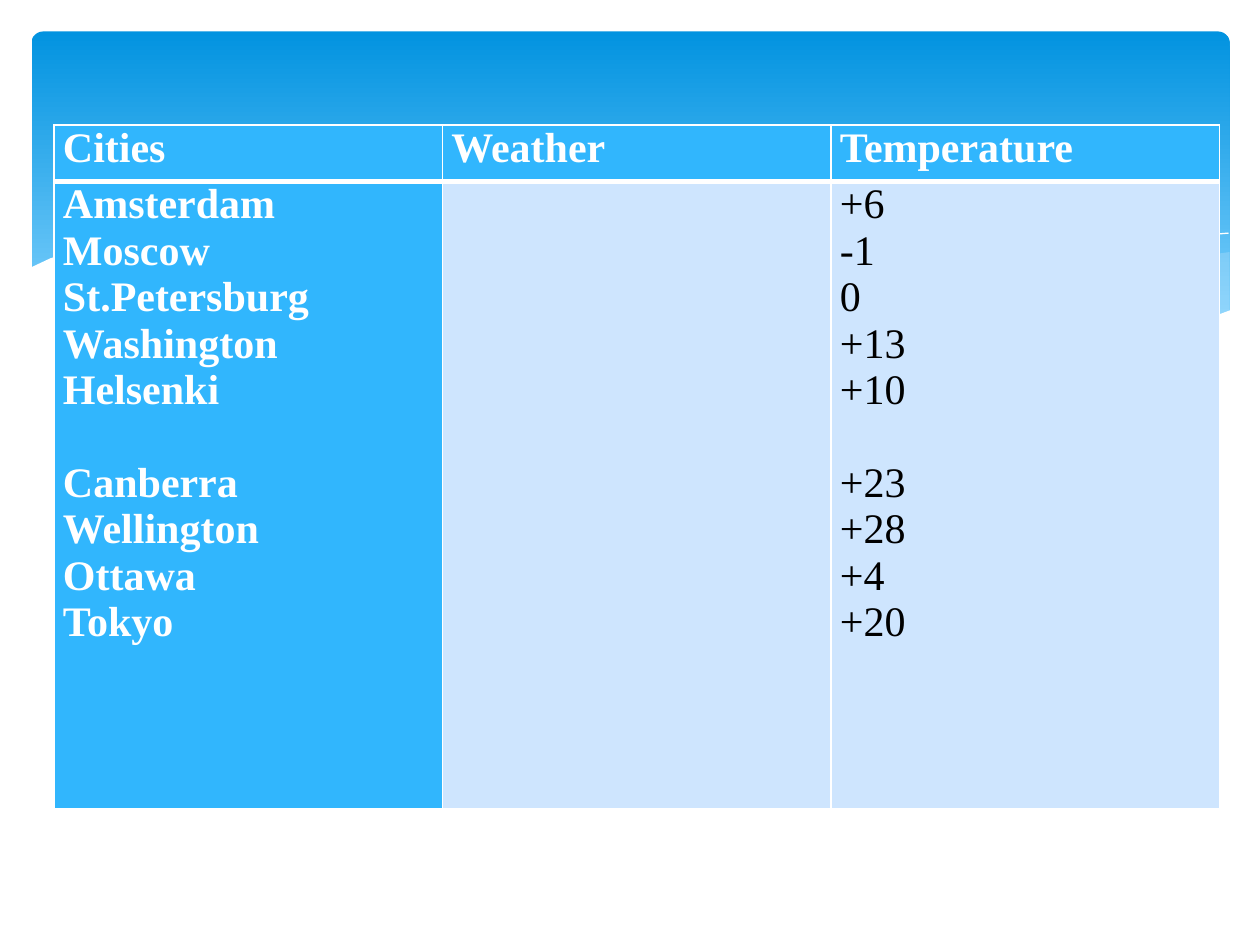
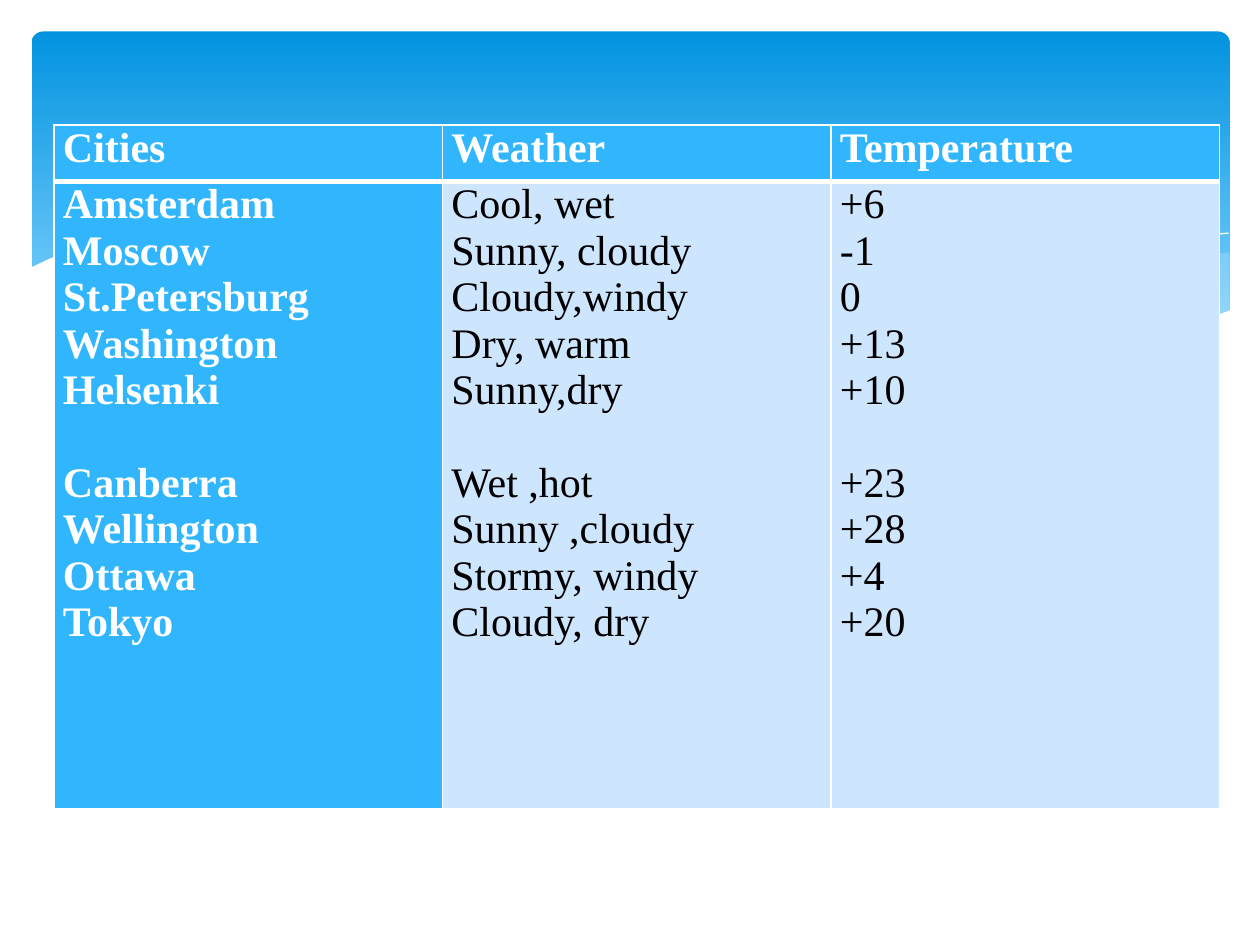
from lxml import etree
from pptx import Presentation
from pptx.dml.color import RGBColor
from pptx.enum.shapes import MSO_SHAPE
from pptx.oxml.ns import qn
from pptx.util import Emu, Inches, Pt

ROUNDED = MSO_SHAPE.ROUNDED_RECTANGLE

HEADINGS = ["Cities", "Weather", "Temperature"]
CITIES = ["Amsterdam", "Moscow", "St.Petersburg", "Washington", "Helsenki",
          "Canberra", "Wellington", "Ottawa", "Tokyo"]
TEMPERATURES = ["+6", "-1", "0", "+13", "+10", "+23", "+28", "+4", "+20"]
WEATHER = ["Cool, wet", "Sunny, cloudy", "Cloudy,windy", "Dry, warm", "Sunny,dry",
           "Wet ,hot", "Sunny ,cloudy", "Stormy, windy", "Cloudy, dry"]
WEATHER_PER_SLIDE = [[], WEATHER]
SECOND_GROUP = 5  # the cities from here on stand one line lower

WHITE, BLACK = "FFFFFF", "000000"
BLUE, PALE_BLUE, MIST = "31B6FD", "CEE5FE", "C6E7FC"
BAND_TOP, BAND_BOTTOM = "0293E0", "83D3FE"
FONT, SIZE, LINE_HEIGHT = "Times New Roman", 24, 26.57

# Waves across the foot of the band, in hundredths of an inch
RIGHT_WAVE = [(976, 200), (948, 204), (921, 210), (861, 223), (805, 237), (753, 248),
              (706, 257), (661, 265), (705, 271), (757, 276), (803, 278), (854, 276),
              (889, 272), (921, 265), (949, 257), (976, 247)]
MIDDLE_WAVE = [(893, 273), (837, 265), (775, 254), (706, 240), (629, 222), (584, 211),
               (528, 200), (465, 191), (399, 186), (344, 186), (286, 191), (342, 199),
               (404, 211), (449, 222), (530, 240), (601, 255), (665, 266), (722, 274),
               (773, 277), (828, 278), (867, 276)]
LONG_LINE = [(309, 195), (344, 190), (401, 187), (469, 189), (533, 194), (582, 200),
             (636, 208), (695, 219), (760, 233), (831, 251), (907, 272)]
SHORT_LINE = [(613, 257), (672, 241), (748, 223), (806, 210), (866, 199), (910, 192),
              (951, 187), (975, 185)]
WHITE_WAVE = [(977, 246), (950, 256), (920, 265), (887, 271), (850, 275), (809, 277),
              (761, 275), (708, 270), (648, 262), (579, 250), (503, 233), (447, 220),
              (391, 207), (340, 197), (292, 190), (250, 186), (211, 184), (161, 184),
              (119, 187), (85, 193), (59, 199), (40, 205), (23, 213), (23, 329), (977, 329)]
WAVES = [  # outline, fill, opacity in percent
    (RIGHT_WAVE, MIST, 29), (MIDDLE_WAVE, MIST, 40),
    (LONG_LINE, None, 100), (SHORT_LINE, None, 100), (WHITE_WAVE, WHITE, 100)]

TABLE_LEFT, TABLE_TOP, TABLE_WIDTH = 0.43, 0.99, 9.25
ROW_HEIGHTS = [0.45, 4.98]


def rgb(value):
    return RGBColor.from_string(value)


def draw_band(slide):
    band = slide.shapes.add_shape(ROUNDED, Inches(0.25), Inches(0.25),
                                  Inches(9.51), Inches(2.7))
    band.adjustments[0] = 0.034
    band.shadow.inherit = False
    band.line.fill.background()
    band.fill.gradient()
    band.fill.gradient_angle = 270
    for stop, colour, position in zip(band.fill.gradient_stops,
                                      (BAND_TOP, BAND_BOTTOM), (0, 0.9)):
        stop.color.rgb = rgb(colour)
        stop.position = position


def draw_wave(slide, outline, fill, opacity):
    """Draw a filled wave, or a white hairline when there is no fill."""
    builder = slide.shapes.build_freeform(*outline[0], scale=Inches(0.01))
    builder.add_line_segments(outline[1:], close=fill is not None)
    wave = builder.convert_to_shape()
    wave.shadow.inherit = False
    if fill is None:
        wave.fill.background()
        wave.line.color.rgb = rgb(WHITE)
        wave.line.width = Pt(0)
        return
    wave.line.fill.background()
    wave.fill.solid()
    wave.fill.fore_color.rgb = rgb(fill)
    if opacity < 100:
        colour = wave._element.spPr.find(qn("a:solidFill"))[0]
        etree.SubElement(colour, qn("a:alpha"), val=str(opacity * 1000))


def write(frame, lines, colour=BLACK, bold=False, gap_before=None):
    """Put one line in each paragraph, with an empty line's room before gap_before."""
    for number, line in enumerate(lines):
        paragraph = frame.add_paragraph() if number else frame.paragraphs[0]
        if number == gap_before:
            paragraph.space_before = Pt(LINE_HEIGHT)
        run = paragraph.add_run()
        run.text = line
        run.font.name, run.font.size, run.font.bold = FONT, Pt(SIZE), bold
        run.font.color.rgb = rgb(colour)


def set_borders(cell, **widths):
    """Give the cell white borders; widths are points by side: L, R, T, B."""
    properties = cell._tc.get_or_add_tcPr()
    for place, (side, width) in enumerate(widths.items()):
        line = etree.Element(qn("a:ln" + side), w=str(Pt(width)))
        fill = etree.SubElement(line, qn("a:solidFill"))
        etree.SubElement(fill, qn("a:srgbClr"), val=WHITE)
        properties.insert(place, line)


def draw_table(slide, weather):
    table = slide.shapes.add_table(
        len(ROW_HEIGHTS), len(HEADINGS), Inches(TABLE_LEFT), Inches(TABLE_TOP),
        Inches(TABLE_WIDTH), Inches(sum(ROW_HEIGHTS))).table
    for row, height in zip(table.rows, ROW_HEIGHTS):
        row.height = Inches(height)
    for column in table.columns:
        column.width = Emu(Inches(TABLE_WIDTH) // len(HEADINGS))

    contents = [[[heading] for heading in HEADINGS], [CITIES, weather, TEMPERATURES]]
    for row, columns in enumerate(contents):
        for column, lines in enumerate(columns):
            cell = table.cell(row, column)
            strong = row == 0 or column == 0
            cell.margin_left = cell.margin_right = Inches(0.07)
            cell.margin_top = cell.margin_bottom = 0
            cell.fill.solid()
            cell.fill.fore_color.rgb = rgb(BLUE if strong else PALE_BLUE)
            set_borders(cell, L=1, R=1, T=3 if row else 1, B=1 if row else 3)
            write(cell.text_frame, lines, colour=WHITE if strong else BLACK,
                  bold=strong, gap_before=SECOND_GROUP)


def main():
    deck = Presentation()
    deck.slide_width, deck.slide_height = Inches(10), Inches(7.5)
    for weather in WEATHER_PER_SLIDE:
        slide = deck.slides.add_slide(deck.slide_layouts[6])
        draw_band(slide)
        for wave in WAVES:
            draw_wave(slide, *wave)
        draw_table(slide, weather)
    deck.save("out.pptx")


if __name__ == "__main__":
    main()
